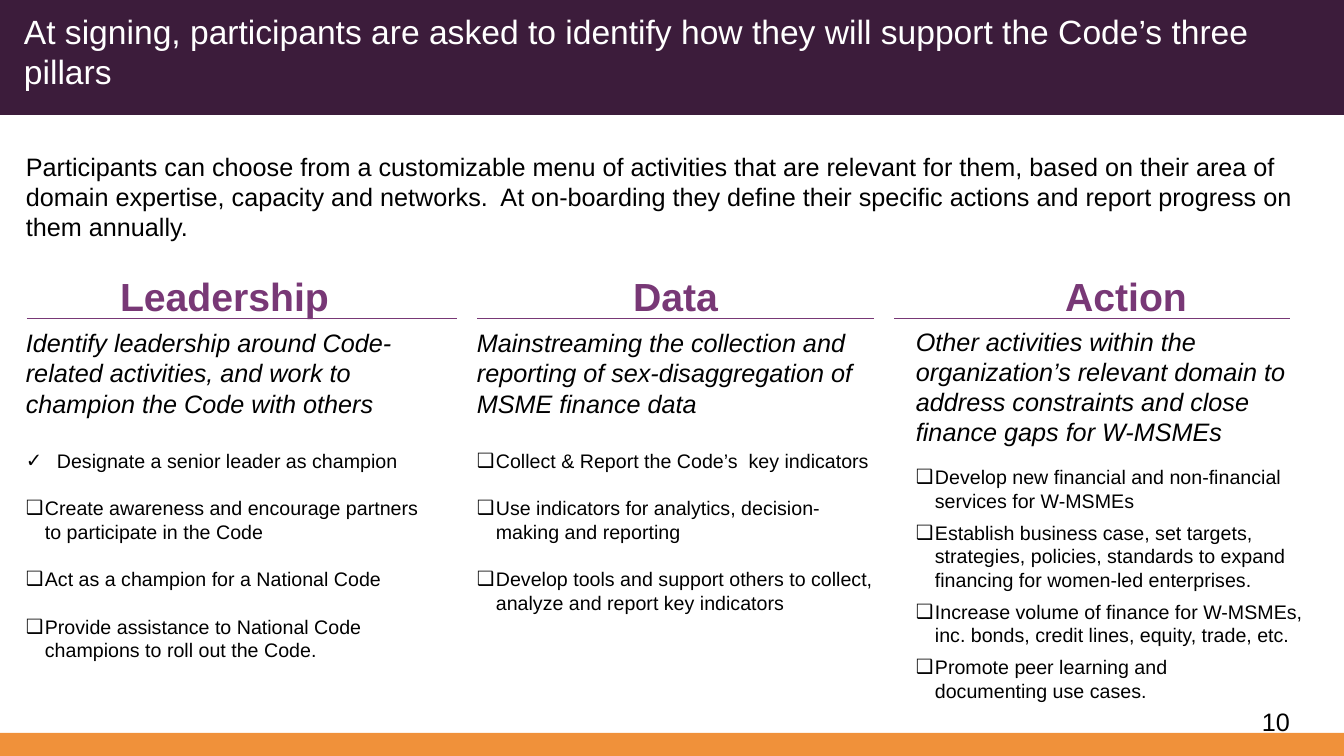
from dataclasses import dataclass, field

from lxml import etree
from pptx import Presentation, util as u
from pptx.dml.color import RGBColor
from pptx.enum import shapes as s, text as t
from pptx.oxml.ns import qn

SLIDE_W, SLIDE_H = 1344, 756
EMU_PER_PX = u.Inches(13.3333) / SLIDE_W


@dataclass(frozen=True)
class Theme:
    font: str = "Arial"
    band: str = "3C1C3B"
    footer: str = "F0913A"
    accent: str = "783876"
    light: str = "FFFFFF"
    dark: str = "000000"
    title: int = 24
    heading: int = 28
    body: int = 18
    item: int = 14


THEME = Theme()


@dataclass(frozen=True)
class Box:
    left: int
    top: int
    width: int
    height: int

    def emu(self) -> list[int]:
        return [px(n) for n in (self.left, self.top, self.width, self.height)]


@dataclass(frozen=True)
class Para:
    text: str
    size: int
    color: str = THEME.dark
    bold: bool = False
    italic: bool = False
    before: int = 0
    centered: bool = False
    bullet: str = ""
    indent: int = 19


@dataclass(frozen=True)
class Pillar:
    """One column; the gaps are points of space before a paragraph."""
    box: Box
    heading: str
    summary: str
    items: list[str]
    summary_gap: int = 6
    first_gap: int = 22
    item_gap: int = 17
    done: list[str] = field(default_factory=list)
    framed: bool = False


def px(length: int) -> int:
    return round(length * EMU_PER_PX)


def rgb(color: str) -> RGBColor:
    return RGBColor.from_string(color)


def add_bar(slide, box: Box, color: str) -> None:
    bar = slide.shapes.add_shape(s.MSO_SHAPE.RECTANGLE, *box.emu())
    bar.shadow.inherit = False
    bar.fill.solid()
    bar.fill.fore_color.rgb = rgb(color)
    bar.line.fill.background()


def add_frame(slide, box: Box):
    """Unfilled box whose thick white border interrupts the rule behind it."""
    frame = slide.shapes.add_shape(s.MSO_SHAPE.RECTANGLE, *box.emu())
    frame.shadow.inherit = False
    frame.fill.background()
    frame.line.color.rgb = rgb(THEME.light)
    frame.line.width = u.Pt(14.25)
    return frame


def add_bullet(paragraph, para: Para) -> None:
    props = paragraph._p.get_or_add_pPr()
    props.set("marL", str(px(para.indent)))
    props.set("indent", str(-px(para.indent)))
    etree.SubElement(props, qn("a:buFont")).set("typeface", THEME.font)
    etree.SubElement(props, qn("a:buChar")).set("char", para.bullet)


def write(holder, paras: list[Para]) -> None:
    frame = holder.text_frame
    frame.word_wrap = True
    frame.vertical_anchor = t.MSO_ANCHOR.TOP
    for index, para in enumerate(paras):
        paragraph = frame.add_paragraph() if index else frame.paragraphs[0]
        paragraph.text = para.text
        paragraph.alignment = t.PP_ALIGN.CENTER if para.centered else t.PP_ALIGN.LEFT
        paragraph.space_before = u.Pt(para.before)
        if para.bullet:
            add_bullet(paragraph, para)
        formats = {"name": THEME.font, "size": u.Pt(para.size),
                   "bold": para.bold, "italic": para.italic}
        for run in paragraph.runs:
            for name, value in formats.items():
                setattr(run.font, name, value)
            run.font.color.rgb = rgb(para.color)


def add_text(slide, box: Box, para: Para) -> None:
    write(slide.shapes.add_textbox(*box.emu()), [para])


def add_rule(slide, left: int, right: int, y: int) -> None:
    rule = slide.shapes.add_connector(
        s.MSO_CONNECTOR.STRAIGHT, px(left), px(y), px(right), px(y))
    rule.line.color.rgb = rgb(THEME.accent)
    rule.line.width = u.Pt(0.5)
    etree.SubElement(rule._element.spPr, qn("a:effectLst"))


def add_pillar(slide, pillar: Pillar) -> None:
    paras = [
        Para(pillar.heading, THEME.heading, THEME.accent, bold=True, centered=True),
        Para(pillar.summary, THEME.body, italic=True, before=pillar.summary_gap),
    ]
    for index, item in enumerate(pillar.done + pillar.items):
        mark, indent = ("✓", 31) if item in pillar.done else ("❑", 19)
        gap = pillar.item_gap if index else pillar.first_gap
        paras.append(Para(item, THEME.item, before=gap, bullet=mark, indent=indent))
    if pillar.framed:
        holder = add_frame(slide, pillar.box)
    else:
        holder = slide.shapes.add_textbox(*pillar.box.emu())
    write(holder, paras)


LEADERSHIP = Pillar(
    Box(16, 267, 417, 425), "Leadership",
    "Identify leadership around Code-related activities, and work to champion the Code with others",
    ["Create awareness and encourage partners to participate in the Code",
     "Act as a champion for a National Code",
     "Provide assistance to National Code champions to roll out the Code."],
    done=["Designate a senior leader as champion"])
ACTION = Pillar(
    Box(906, 267, 440, 457), "Action",
    "Other activities within the organization’s relevant domain to address constraints "
    "and close finance gaps for W-MSMEs",
    ["Develop new financial and non-financial services for W-MSMEs",
     "Establish business case, set targets, strategies, policies, standards to expand "
     "financing for women-led enterprises.",
     "Increase volume of finance for W-MSMEs, inc. bonds, credit lines, equity, trade, etc.",
     "Promote peer learning and\vdocumenting use cases."],
    summary_gap=5, first_gap=13, item_gap=6)
DATA = Pillar(
    Box(467, 267, 417, 355), "Data",
    "Mainstreaming the collection and reporting of sex-disaggregation of MSME finance data",
    ["Collect & Report the Code’s  key indicators",
     "Use indicators for analytics, decision-making and reporting",
     "Develop tools and support others to collect, analyze and report key indicators"],
    framed=True)


def main() -> None:
    deck = Presentation()
    deck.slide_width, deck.slide_height = px(SLIDE_W), px(SLIDE_H)
    slide = deck.slides.add_slide(deck.slide_layouts[6])

    add_bar(slide, Box(0, 733, SLIDE_W, 23), THEME.footer)
    add_bar(slide, Box(0, 0, SLIDE_W, 115), THEME.band)
    add_text(slide, Box(14, 6, 1316, 92), Para(
        "At signing, participants are asked to identify how they will support "
        "the Code’s three pillars", THEME.title, THEME.light))
    add_text(slide, Box(1252, 701, 92, 74), Para("10", THEME.body))
    add_text(slide, Box(16, 146, 1316, 102), Para(
        "Participants can choose from a customizable menu of activities that are relevant "
        "for them, based on their area of domain expertise, capacity and networks.  "
        "At on-boarding they define their specific actions and report progress on "
        "them annually.", THEME.body, before=6))
    add_rule(slide, 27, 1290, 318)
    for pillar in (LEADERSHIP, ACTION, DATA):
        add_pillar(slide, pillar)

    deck.save("out.pptx")


if __name__ == "__main__":
    main()
